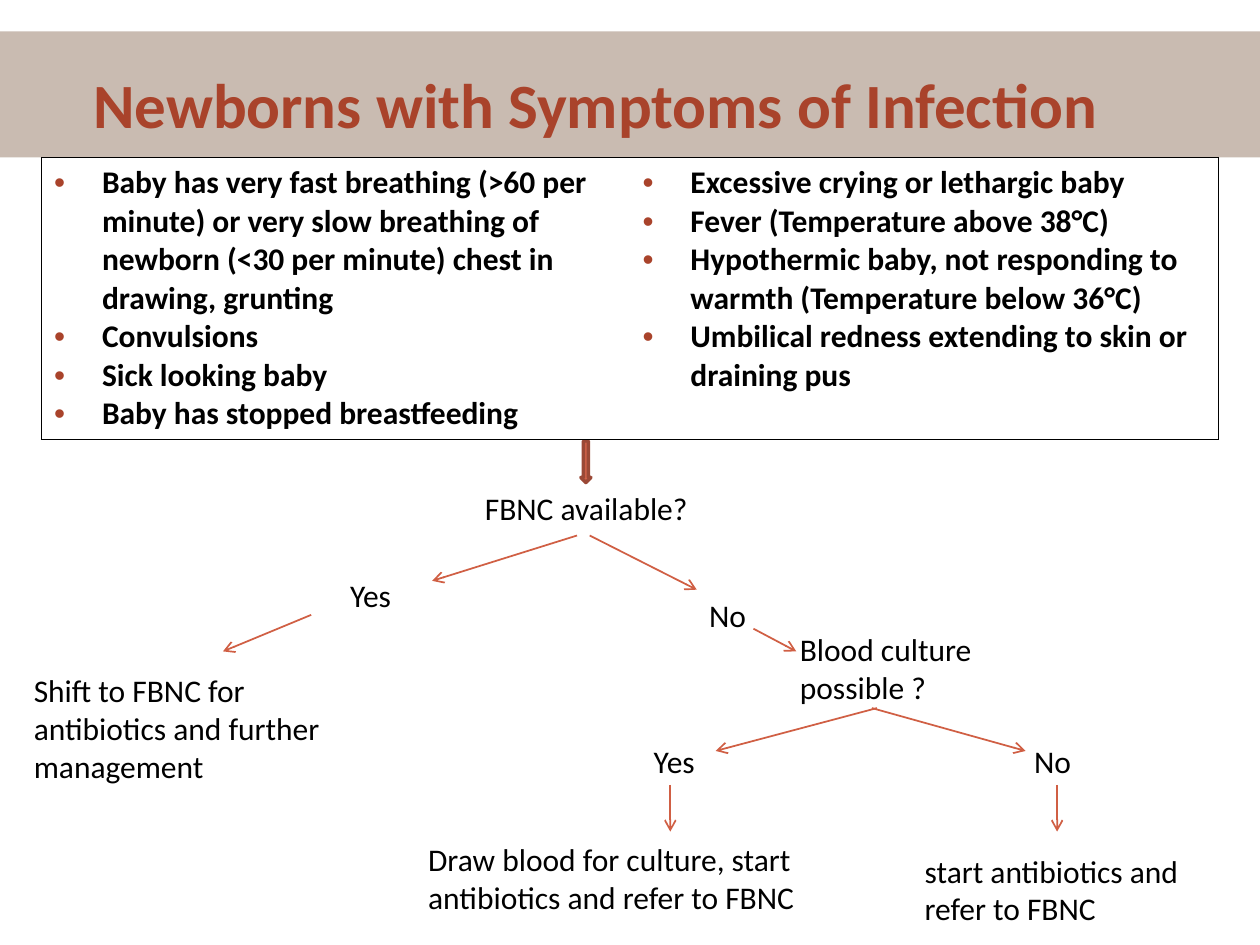
import pptx
import pptx.util
import pptx.dml.color
import pptx.enum.shapes
import pptx.enum.text
import pptx.oxml
import pptx.oxml.ns
from lxml import etree

Inches = pptx.util.Inches
Pt = pptx.util.Pt
RGBColor = pptx.dml.color.RGBColor
SHAPE = pptx.enum.shapes.MSO_SHAPE
qn = pptx.oxml.ns.qn

BLACK = RGBColor(0x00, 0x00, 0x00)
RUST = RGBColor(0xA9, 0x43, 0x2B)
BAND = RGBColor(0xC9, 0xBB, 0xB1)
ARROW = RGBColor(0xD0, 0x5F, 0x44)
BLOCK = RGBColor(0xD1, 0x63, 0x49)
EDGE = RGBColor(0x9B, 0x49, 0x36)
FONT = "Calibri"

TITLE = "Newborns with Symptoms of Infection"
SIGNS = [
    [
        "Baby has very fast breathing (>60 per minute) or very slow breathing "
        "of newborn (<30 per minute) chest in drawing, grunting",
        "Convulsions",
        "Sick looking baby",
        "Baby has stopped breastfeeding",
    ],
    [
        "Excessive crying or lethargic baby",
        "Fever (Temperature above 38°C)",
        "Hypothermic baby, not responding to warmth (Temperature below 36°C)",
        "Umbilical redness extending to skin or draining pus",
    ],
]
# text, left, top, width, height
STEPS = [
    ("FBNC available?", 3.75, 3.83, 2.83, 0.4),
    ("Yes", 2.68, 4.52, 0.9, 0.4),
    ("No", 5.53, 4.68, 0.9, 0.4),
    ("Shift to FBNC for antibiotics and further management", 0.17, 5.28, 2.76, 1.01),
    ("Blood culture possible ?", 6.25, 4.95, 2, 0.71),
    ("Yes", 5.09, 5.84, 0.9, 0.4),
    ("No", 8.11, 5.84, 0.9, 0.4),
    ("Draw blood for culture, start antibiotics and refer to FBNC", 3.3, 6.62, 3.54, 0.71),
    ("start antibiotics and refer to FBNC", 7.24, 6.71, 2.33, 0.71),
]
# start x, start y, end x, end y
ARROWS = [
    (4.68, 4.25, 5.53, 4.68),
    (4.58, 4.25, 3.43, 4.61),
    (2.47, 4.88, 1.77, 5.17),
    (5.98, 4.99, 6.32, 5.17),
    (6.92, 5.62, 8.14, 5.96),
    (6.96, 5.62, 5.68, 5.96),
    (5.32, 6.23, 5.32, 6.6),
    (8.39, 6.23, 8.39, 6.6),
]


def style(font, size, color=BLACK, bold=False):
    font.name, font.size, font.bold = FONT, Pt(size), bold
    font.color.rgb = color


def add_block(slide, kind, box, fill):
    shape = slide.shapes.add_shape(kind, *map(Inches, box))
    shape.shadow.inherit = False
    shape.fill.solid()
    shape.fill.fore_color.rgb = fill
    shape.line.fill.background()
    return shape


def add_title(slide):
    title = slide.shapes.title
    band = add_block(slide, SHAPE.RECTANGLE, (0, 0.25, 10, 1), BAND)
    title.element.addprevious(band.element)
    title.left, title.top, title.width, title.height = map(Inches, (0.3, 0.25, 9.4, 0.92))
    frame = title.text_frame
    frame.text = TITLE
    frame.margin_left = Inches(0.44)
    frame.vertical_anchor = pptx.enum.text.MSO_ANCHOR.BOTTOM
    frame.paragraphs[0].alignment = pptx.enum.text.PP_ALIGN.LEFT
    style(frame.paragraphs[0].runs[0].font, 36, RUST, True)


def add_bullet(para):
    props = para._p.get_or_add_pPr()
    props.set("marL", str(Inches(0.38)))
    props.set("indent", str(-Inches(0.38)))
    color = etree.SubElement(props, qn("a:buClr"))
    etree.SubElement(color, qn("a:srgbClr"), val=str(RUST))
    etree.SubElement(props, qn("a:buFont"), typeface="Arial")
    etree.SubElement(props, qn("a:buChar"), char="•")


def set_borders(cell, sides):
    """Draw black lines on the given sides (letters of LRTB), none elsewhere."""
    props = cell._tc.get_or_add_tcPr()
    for spot, side in enumerate("LRTB"):
        line = etree.Element(qn("a:ln" + side), w=str(Pt(1)))
        if side in sides:
            fill = etree.SubElement(line, qn("a:solidFill"))
            etree.SubElement(fill, qn("a:srgbClr"), val=str(BLACK))
        else:
            etree.SubElement(line, qn("a:noFill"))
        props.insert(spot, line)


def add_signs(slide):
    box = map(Inches, (0.33, 1.25, 9.34, 2.24))
    table = slide.shapes.add_table(1, len(SIGNS), *box).table
    table.first_row = table.horz_banding = False
    for cell, signs, sides in zip(table.rows[0].cells, SIGNS, ("LTB", "RTB")):
        cell.fill.background()
        set_borders(cell, sides)
        cell.text_frame.text = "\n".join(signs)
        for para in cell.text_frame.paragraphs:
            add_bullet(para)
            style(para.runs[0].font, 18, bold=True)


def add_step(slide, text, *box):
    frame = slide.shapes.add_textbox(*map(Inches, box)).text_frame
    frame.word_wrap = True
    frame.auto_size = pptx.enum.text.MSO_AUTO_SIZE.SHAPE_TO_FIT_TEXT
    frame.text = text
    style(frame.paragraphs[0].runs[0].font, 18)


def add_arrow(slide, *ends):
    kind = pptx.enum.shapes.MSO_CONNECTOR.STRAIGHT
    link = slide.shapes.add_connector(kind, *map(Inches, ends))
    link.line.color.rgb = ARROW
    link.line.width = Pt(1)
    etree.SubElement(link.line._get_or_add_ln(), qn("a:tailEnd"), type="arrow")
    etree.SubElement(link.element.spPr, qn("a:effectLst"))


def main():
    deck = pptx.Presentation()
    deck.slide_width, deck.slide_height = Inches(10), Inches(7.5)
    slide = deck.slides.add_slide(deck.slide_layouts[5])
    add_title(slide)
    down = add_block(slide, SHAPE.DOWN_ARROW, (4.61, 3.5, 0.08, 0.33), BLOCK)
    down.line.color.rgb = EDGE
    down.line.width = Pt(2)
    add_signs(slide)
    for step in STEPS:
        add_step(slide, *step)
    for ends in ARROWS:
        add_arrow(slide, *ends)
    deck.save("out.pptx")


if __name__ == "__main__":
    main()
